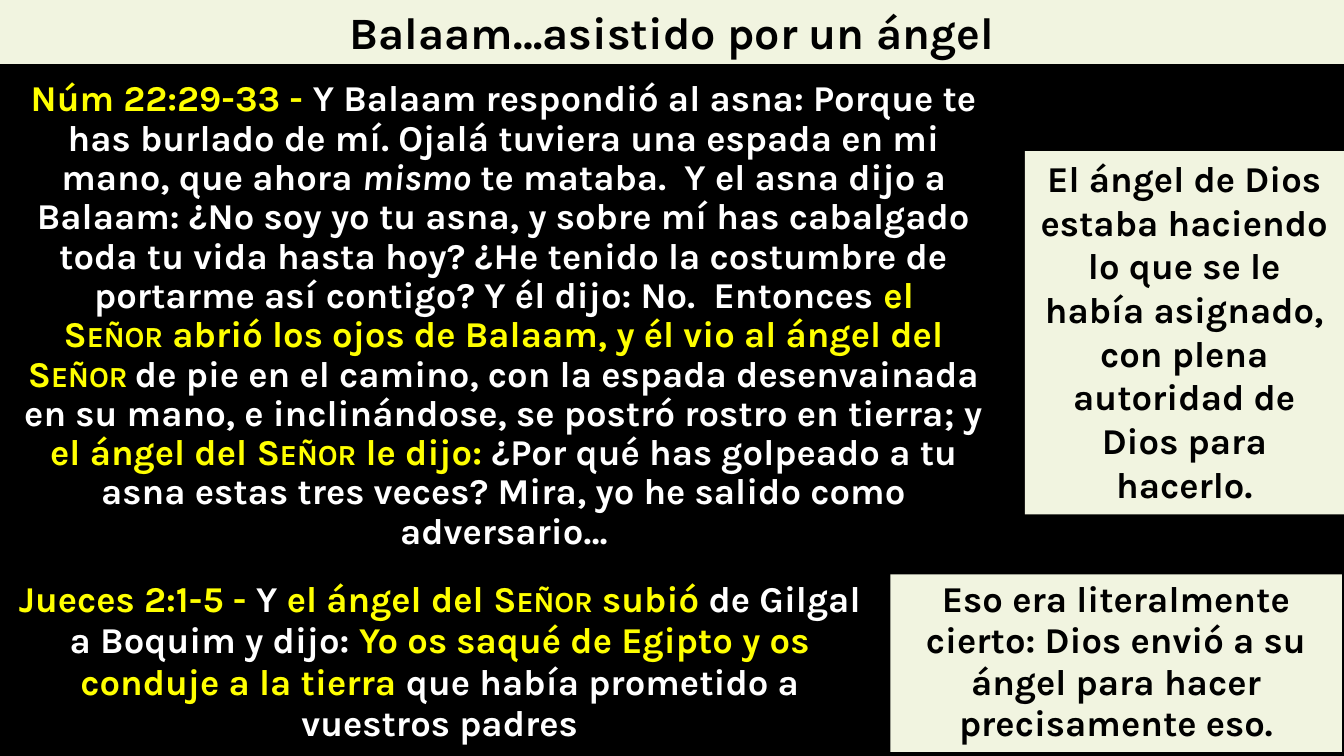
from dataclasses import dataclass

from pptx import Presentation
from pptx.dml.color import RGBColor
from pptx.enum.shapes import MSO_SHAPE
from pptx.enum.text import MSO_ANCHOR, MSO_AUTO_SIZE, PP_ALIGN
from pptx.util import Emu, Pt

RECT = MSO_SHAPE.RECTANGLE
CENTER = PP_ALIGN.CENTER
TOP = MSO_ANCHOR.TOP
GROW = MSO_AUTO_SIZE.SHAPE_TO_FIT_TEXT

PX = 9525
WIDE, HIGH = 1280, 720
FONT = "Karla"
BLACK, WHITE, YELLOW, CREAM = "000000", "FFFFFF", "FFFF00", "F1F4E0"
TIE, HARD = "~", chr(160)  # a tie in the wording stands for a no-break space


@dataclass(frozen=True)
class Run:
    text: str
    color: str = WHITE
    small: bool = False
    slant: bool = False


@dataclass(frozen=True)
class Block:
    box: tuple[int, int, int, int]
    runs: tuple[Run, ...]
    fill: str | None = None
    size: int = 26
    line: float = 1.0
    before: int = 0


def key(text: str) -> Run:
    """Highlighted wording."""
    return Run(text, YELLOW)


def lord(text: str) -> Run:
    """Highlighted wording in small capitals."""
    return Run(text, YELLOW, small=True)


def card(box: tuple[int, int, int, int], text: str,
         size: int = 26, line: float = 1.0) -> Block:
    """Cream panel with black text."""
    return Block(box, (Run(text, BLACK),), CREAM, size, line)


BLOCKS = (
    card((976, 144, 304, 346),
         "El ángel de Dios estaba haciendo lo que se le había asignado, "
         "con plena autoridad de Dios para hacerlo."),
    Block((0, 72, 960, 464), (
        key("Núm 22:29-33 - "),
        Run("Y Balaam respondió al asna: Porque te has burlado de mí. "
            "Ojalá tuviera una espada en mi mano, que ahora~"),
        Run("mismo", slant=True),
        Run("~te mataba.~~Y el asna dijo a Balaam: ¿No soy yo tu asna, "
            "y sobre mí has cabalgado toda tu vida hasta hoy? ¿He tenido la "
            "costumbre de portarme así contigo? Y él dijo: No. ~Entonces "),
        key("el "),
        lord("Señor"),
        key("~abrió los ojos de Balaam, y él vio al ángel del "),
        lord("Señor~"),
        Run("de pie en el camino, con la espada desenvainada en su mano, "
            "e inclinándose, se postró rostro en tierra;~y "),
        key("el ángel del~"),
        lord("Señor"),
        key("~le dijo: "),
        Run("¿Por qué has golpeado a tu asna estas tres veces? "
            "Mira, yo he salido como adversario…"),
    ), line=0.9, before=10),
    card((848, 547, 430, 169),
         "Eso era literalmente cierto: Dios envió a su ángel "
         "para hacer precisamente eso.", line=0.95),
    Block((2, 547, 834, 169), (
        key("Jueces 2:1-5 - "),
        Run("Y "),
        key("el ángel del~"),
        lord("Señor"),
        key("~subió "),
        Run("de Gilgal a Boquim~y dijo: "),
        key("Yo os saqué de Egipto~y os conduje a la tierra "),
        Run("que había prometido a vuestros padres"),
    ), line=0.95),
    card((0, 0, WIDE, 61), "Balaam…asistido por un ángel", size=32),
)


def paint(fill, color: str) -> None:
    fill.solid()
    fill.fore_color.rgb = RGBColor.from_string(color)


def write(para, run: Run, size: int) -> None:
    part = para.add_run()
    part.text = run.text.replace(TIE, HARD)
    font = part.font
    font.name, font.size, font.bold = FONT, Pt(size), True
    paint(font.fill, run.color)
    if run.slant:
        font.italic = True
    if run.small:
        part._r.get_or_add_rPr().set("cap", "small")


def draw(slide, block: Block) -> None:
    box = [Emu(n * PX) for n in block.box]
    if block.fill:
        shape = slide.shapes.add_shape(RECT, *box)
        shape.shadow.inherit = False
        paint(shape.fill, block.fill)
        shape.line.fill.background()
    else:
        shape = slide.shapes.add_textbox(*box)
    frame = shape.text_frame
    frame.word_wrap = True
    frame.auto_size = GROW
    frame.vertical_anchor = TOP
    para = frame.paragraphs[0]
    para.alignment = CENTER
    para.line_spacing = block.line
    para.space_before = Pt(block.before)
    for run in block.runs:
        write(para, run, block.size)


def main() -> None:
    deck = Presentation()
    deck.slide_width, deck.slide_height = Emu(WIDE * PX), Emu(HIGH * PX)
    slide = deck.slides.add_slide(deck.slide_layouts[6])
    paint(slide.background.fill, BLACK)
    for block in BLOCKS:
        draw(slide, block)
    deck.save("out.pptx")


if __name__ == "__main__":
    main()
